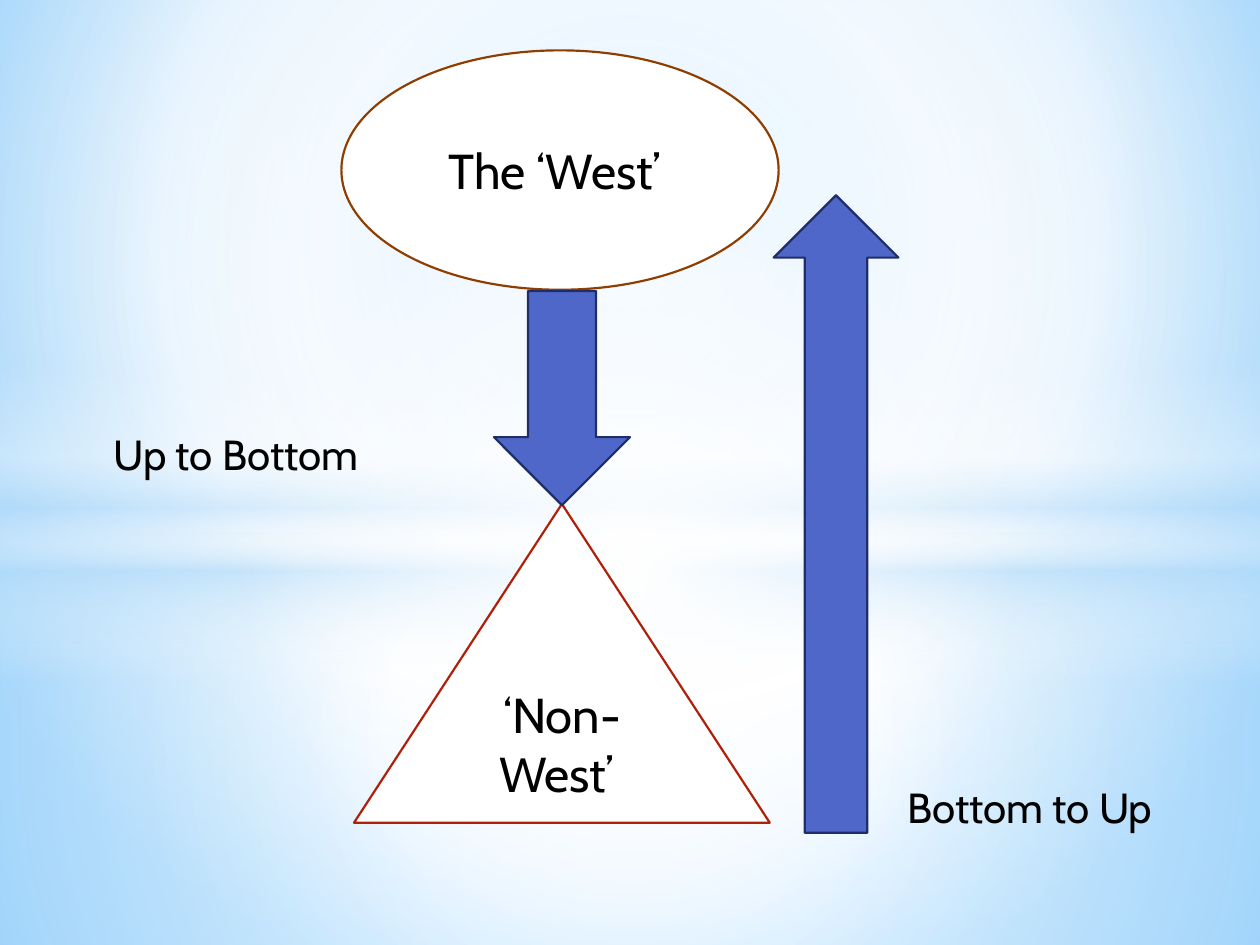
from lxml.etree import SubElement
from pptx import Presentation
from pptx.dml.color import RGBColor
from pptx.enum.shapes import MSO_SHAPE
from pptx.enum.text import MSO_ANCHOR, MSO_AUTO_SIZE, PP_ALIGN
from pptx.oxml.ns import qn
from pptx.util import Inches, Pt

COLORS = {
    "white": "FFFFFF", "black": "000000", "sky": "9ED5FF", "azure": "5BB9FF",
    "mist": "B4DCFA", "red": "B01F07", "brown": "903E00",
    "blue": "4E67C8", "navy": "1F2E69",
}


def color(name):
    return RGBColor.from_string(COLORS[name])


def write_text(frame, text, size=24, align=PP_ALIGN.LEFT, anchor=MSO_ANCHOR.TOP):
    frame.word_wrap = True
    frame.vertical_anchor = anchor
    para = frame.paragraphs[0]
    para.alignment = align
    span = para.add_run()
    span.text = text
    span.font.name = SlideBuilder.font
    span.font.size = Pt(size)
    span.font.color.rgb = color("black")


def set_gradient(fill, element, stops, focus=None, angle=0):
    """Fill with (position, color, opacity) stops, circular around focus or linear."""
    fill.gradient()
    gradient = next(element.iter(qn("a:gradFill")))
    gradient.clear()
    gradient.set("rotWithShape", "1")
    stop_list = SubElement(gradient, qn("a:gsLst"))
    for position, name, opacity in stops:
        stop = SubElement(stop_list, qn("a:gs"), pos=str(position * 1000))
        tint = SubElement(stop, qn("a:srgbClr"), val=COLORS[name])
        if opacity < 100:
            SubElement(tint, qn("a:alpha"), val=str(opacity * 1000))
    if focus:
        circle = SubElement(gradient, qn("a:path"), path="circle")
        sides = {side: str(share * 1000) for side, share in zip("ltrb", focus)}
        SubElement(circle, qn("a:fillToRect"), **sides)
    else:
        SubElement(gradient, qn("a:lin"), ang=str(angle * 60000), scaled="0")


class SlideBuilder:
    font = "Cabin"
    line_width = Pt(1.25)
    center = (50, 50, 50, 50)

    def __init__(self, page):
        self.page = page

    def backdrop(self, stops, focus):
        set_gradient(self.page.background.fill, self.page.element, stops, focus)

    def base_shape(self, kind, place):
        shape = self.page.shapes.add_shape(kind, *map(Inches, place))
        shape.shadow.inherit = False
        return shape

    def glow(self, kind, place, stops, focus=center, angle=0):
        shape = self.base_shape(kind, place)
        set_gradient(shape.fill, shape.element, stops, focus, angle)
        shape.line.fill.background()

    def figure(self, kind, place, fill, line, text=None):
        shape = self.base_shape(kind, place)
        shape.fill.solid()
        shape.fill.fore_color.rgb = color(fill)
        shape.line.color.rgb = color(line)
        shape.line.width = self.line_width
        if text:
            write_text(shape.text_frame, text, size=28, align=PP_ALIGN.CENTER,
                       anchor=MSO_ANCHOR.MIDDLE)

    def label(self, place, text):
        box = self.page.shapes.add_textbox(*map(Inches, place))
        write_text(box.text_frame, text)
        box.text_frame.margin_left = Inches(0.15)
        box.text_frame.auto_size = MSO_AUTO_SIZE.SHAPE_TO_FIT_TEXT


def main():
    deck = Presentation()
    deck.slide_width, deck.slide_height = Inches(10), Inches(7.5)
    slide = SlideBuilder(deck.slides.add_slide(deck.slide_layouts[6]))

    # Background with soft light bands
    slide.backdrop([(0, "sky", 100), (60, "white", 100), (100, "azure", 100)],
                   focus=(20, 10, 20, 60))
    slide.glow(MSO_SHAPE.RECTANGLE, (0, 4.23, 10, 3.27),
               [(0, "white", 91), (37, "white", 76), (100, "mist", 79)])
    slide.glow(MSO_SHAPE.RECTANGLE, (0, 0, 10, 4.23),
               [(0, "white", 89), (48, "white", 62), (100, "mist", 79)])
    slide.glow(MSO_SHAPE.RECTANGLE, (0, 2.9, 10, 2.5),
               [(0, "white", 0), (29, "white", 30), (45, "mist", 40),
                (55, "white", 26), (65, "mist", 60), (100, "white", 0)],
               focus=None, angle=90)
    slide.glow(MSO_SHAPE.OVAL, (0, 1.75, 10, 5.58),
               [(0, "white", 100), (54, "white", 0)])

    # The two worlds
    slide.figure(MSO_SHAPE.FLOWCHART_EXTRACT, (2.81, 4, 3.3, 2.53),
                 "white", "red", "‘Non-West’ ")
    slide.figure(MSO_SHAPE.OVAL, (2.71, 0.4, 3.47, 1.9),
                 "white", "brown", "The ‘West’ ")

    # Arrows between them
    slide.figure(MSO_SHAPE.DOWN_ARROW, (3.92, 2.31, 1.08, 1.7), "blue", "navy")
    slide.figure(MSO_SHAPE.UP_ARROW, (6.14, 1.55, 0.99, 5.06), "blue", "navy")

    # Arrow labels
    slide.label((7.05, 6.15, 2.72, 0.5), "Bottom to Up")
    slide.label((0.75, 3.35, 2.76, 0.5), "Up to Bottom")

    deck.save("out.pptx")


if __name__ == "__main__":
    main()
